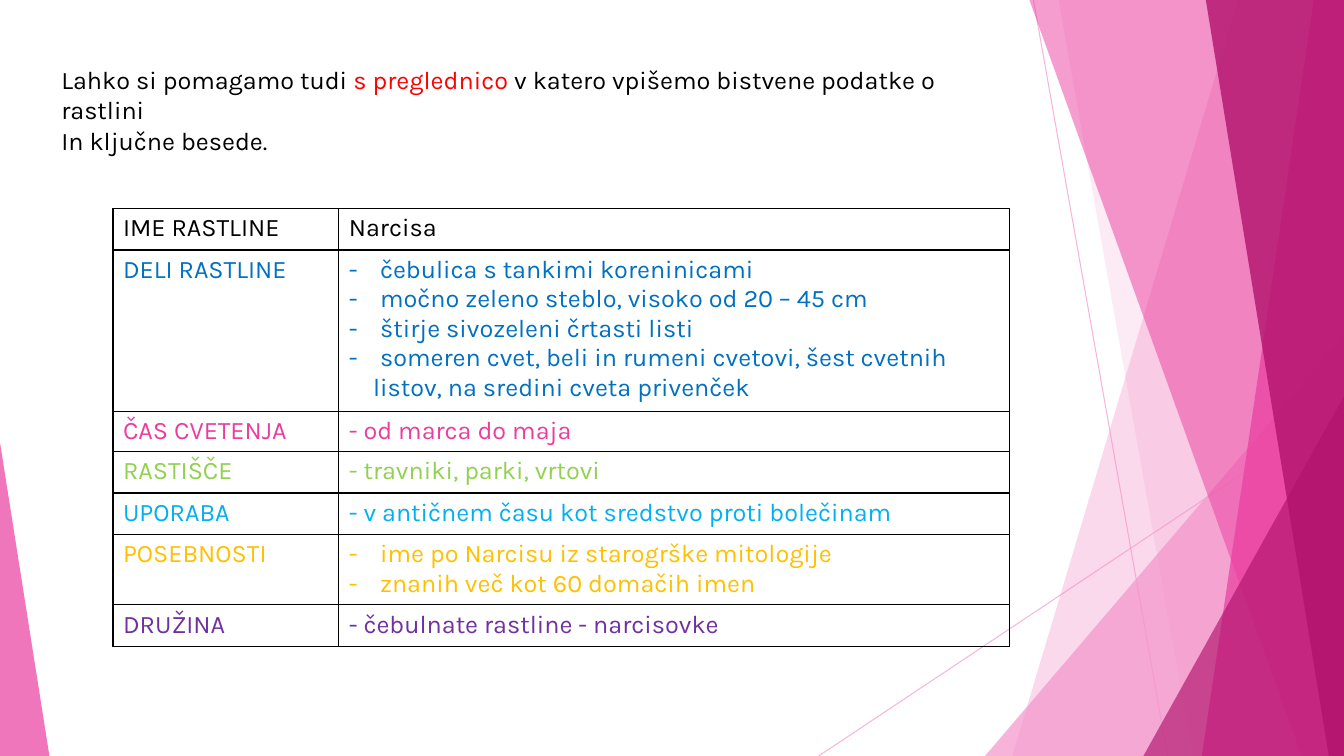
from dataclasses import dataclass

from lxml import etree
from pptx import Presentation
from pptx.dml.color import RGBColor
from pptx.enum.shapes import MSO_CONNECTOR, MSO_SHAPE
from pptx.oxml import parse_xml
from pptx.oxml.ns import nsdecls, qn
from pptx.util import Inches, Pt

STRAIGHT = MSO_CONNECTOR.STRAIGHT
RIGHT_TRIANGLE = MSO_SHAPE.ISOSCELES_TRIANGLE


@dataclass(frozen=True)
class Theme:
    font: str = "Karla"
    size: int = 18
    black: str = "000000"
    red: str = "FF0000"
    blue: str = "0070C0"
    green: str = "92D050"
    sky: str = "00B0F0"
    gold: str = "FFC000"
    purple: str = "7030A0"
    light_pink: str = "F496CB"
    pink: str = "EB3D9F"
    magenta: str = "B2136D"


theme = Theme()


def paint(fill, color, opacity):
    """Fill solidly with a colour at an opacity in percent."""
    fill.solid()
    fill.fore_color.rgb = RGBColor.from_string(color)
    color_node = fill._xPr.find(".//" + qn("a:srgbClr"))
    etree.SubElement(color_node, qn("a:alpha"), val=str(opacity * 1000))


def add_span(para, text, color):
    span = para.add_run()
    span.text = text
    span.font.name = theme.font
    span.font.size = Pt(theme.size)
    span.font.color.rgb = RGBColor.from_string(color)


deck = Presentation()
deck.slide_width = Inches(13.33)
deck.slide_height = Inches(7.5)
page = deck.slides.add_slide(deck.slide_layouts[6])

# Thin crossing lines
for x1, y1, x2, y2 in [(10.25, 0, 11.58, 7.5), (13.33, 4.03, 8.12, 7.5)]:
    ray = page.shapes.add_connector(
        STRAIGHT, Inches(x1), Inches(y1), Inches(x2), Inches(y2))
    ray.line.width = Pt(0.75)
    paint(ray.line.fill, theme.light_pink, 70)
    etree.SubElement(ray._element.spPr, qn("a:effectLst"))

# Facets from back to front: a band is (top x, bottom x) and runs to the right
# edge; a triangle is (left, top, width, height, apex position)
facets = [
    ((12.28, 10.04), theme.light_pink, 36),
    ((10.5, 11.83), theme.light_pink, 20),
    ((9.77, 3.33, 3.56, 4.17, 1), theme.light_pink, 72),
    ((10.21, 12.91), theme.pink, 50),
    ((13.03, 11.92), theme.pink, 70),
    ((11.96, 13.18), theme.magenta, 80),
    ((11.34, 3.93, 1.99, 3.57, 1), theme.magenta, 66),
    ((0, 4.39, 0.49, 3.11, 0), theme.pink, 70),
]
for outline, color, opacity in facets:
    if len(outline) == 2:
        top_x, bottom_x = map(Inches, outline)
        builder = page.shapes.build_freeform(top_x, 0)
        builder.add_line_segments([
            (deck.slide_width, 0),
            (deck.slide_width, deck.slide_height),
            (bottom_x, deck.slide_height),
        ])
        facet = builder.convert_to_shape()
    else:
        *frame, apex = outline
        facet = page.shapes.add_shape(RIGHT_TRIANGLE, *map(Inches, frame))
        facet.adjustments[0] = apex
    facet.shadow.inherit = False
    facet.line.fill.background()
    paint(facet.fill, color, opacity)

# Introduction
intro = page.shapes.add_textbox(
    Inches(0.51), Inches(0.59), Inches(9.62), Inches(0.71)).text_frame
intro.word_wrap = True
first_line = intro.paragraphs[0]
add_span(first_line, "Lahko si pomagamo tudi ", theme.black)
add_span(first_line, "s preglednico ", theme.red)
add_span(first_line, "v katero vpišemo bistvene podatke o rastlini", theme.black)
add_span(intro.add_paragraph(), "In ključne besede.", theme.black)

# Plant table: label, colour, row height, bulleted lines, plain lines
plant_rows = [
    ("IME RASTLINE", theme.black, 0.41, [], ["Narcisa"]),
    ("DELI RASTLINE", theme.blue, 1.6, [
        "čebulica s tankimi koreninicami",
        "močno zeleno steblo, visoko od 20 – 45 cm",
        "štirje sivozeleni črtasti listi",
        "someren cvet, beli in rumeni cvetovi, šest cvetnih",
    ], ["listov, na sredini cveta privenček"]),
    ("ČAS CVETENJA", theme.pink, 0.4, [], ["- od marca do maja"]),
    ("RASTIŠČE", theme.green, 0.41, [], ["- travniki, parki, vrtovi"]),
    ("UPORABA", theme.sky, 0.41, [],
     ["- v antičnem času kot sredstvo proti bolečinam"]),
    ("POSEBNOSTI", theme.gold, 0.7, [
        "ime po Narcisu iz starogrške mitologije",
        "znanih več kot 60 domačih imen",
    ], []),
    ("DRUŽINA", theme.purple, 0.41, [], ["- čebulnate rastline - narcisovke"]),
]
table = page.shapes.add_table(
    len(plant_rows), 2, Inches(1.12), Inches(2.07), Inches(8.89),
    Inches(sum(row[2] for row in plant_rows))).table
table.first_row = False
table.horz_banding = False
table.columns[0].width = Inches(2.24)
table.columns[1].width = Inches(6.65)

for index, (label, color, height, bullets, plain) in enumerate(plant_rows):
    table.rows[index].height = Inches(height)
    label_cell, detail_cell = table.rows[index].cells
    add_span(label_cell.text_frame.paragraphs[0], label, color)

    details = detail_cell.text_frame
    for number, text in enumerate(bullets + plain):
        para = details.add_paragraph() if number else details.paragraphs[0]
        add_span(para, text, color)
        if number < len(bullets):
            properties = para._p.get_or_add_pPr()
            properties.set("marL", str(Inches(0.31)))
            properties.set("indent", str(-Inches(0.31)))
            etree.SubElement(properties, qn("a:buFont"), typeface=theme.font)
            etree.SubElement(properties, qn("a:buChar"), char="-")
        elif bullets:
            para._p.get_or_add_pPr().set("marL", str(Inches(0.24)))

    for cell in (label_cell, detail_cell):
        for side in ("lnL", "lnR", "lnT", "lnB"):
            cell._tc.get_or_add_tcPr().append(parse_xml(
                f'<a:{side} {nsdecls("a")} w="{Pt(1)}"><a:solidFill>'
                f'<a:srgbClr val="{theme.black}"/></a:solidFill></a:{side}>'))
        cell.fill.background()

deck.save("out.pptx")
